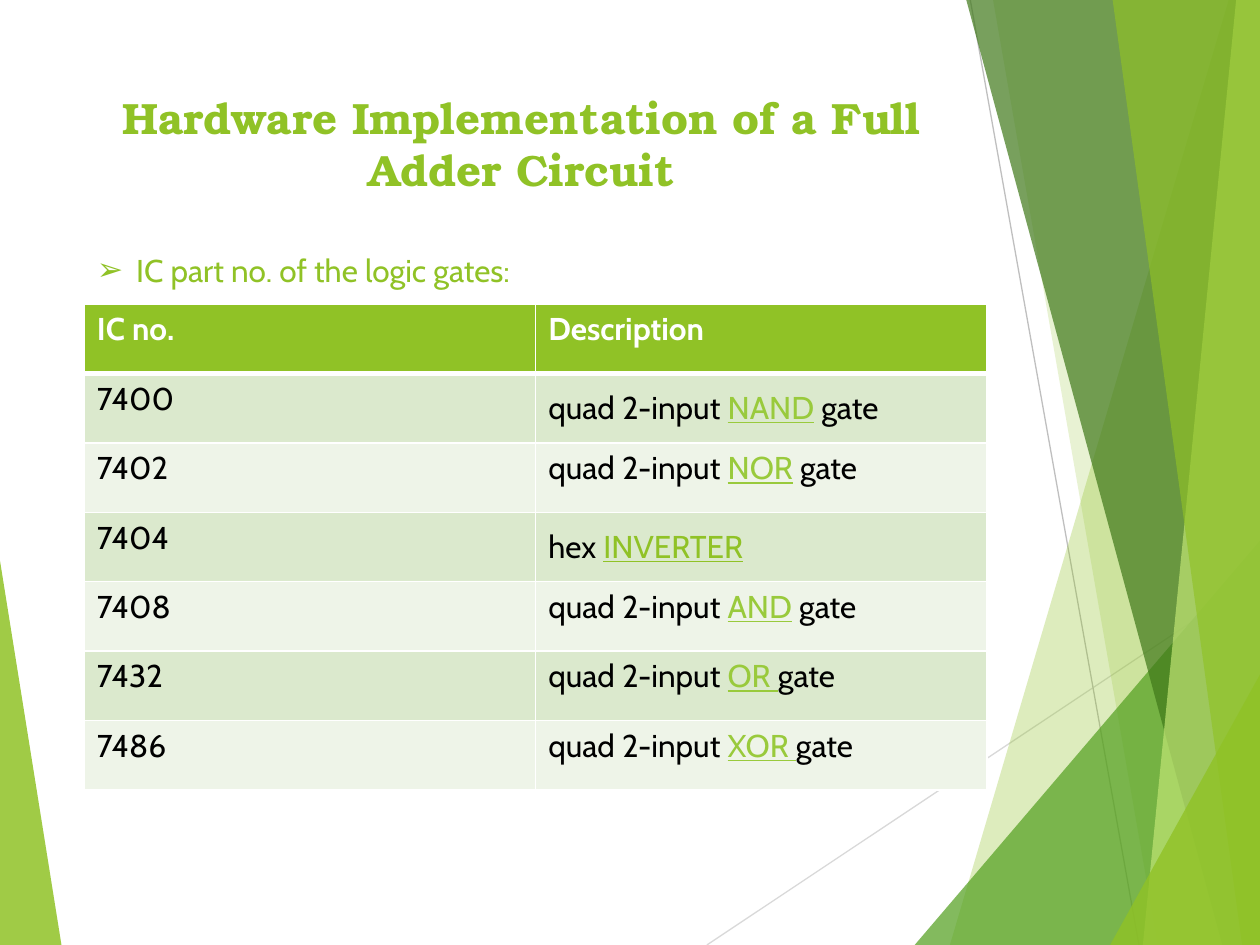
from dataclasses import dataclass
from typing import Any

import lxml.etree
import pptx
import pptx.dml.color
import pptx.enum.shapes
import pptx.enum.text
import pptx.oxml.ns
import pptx.util

Cm = pptx.util.Cm
Pt = pptx.util.Pt
qn = pptx.oxml.ns.qn
ANCHOR = pptx.enum.text.MSO_ANCHOR


@dataclass(frozen=True)
class Theme:
    green: str = "90C226"
    link: str = "99CA3C"
    forest: str = "54A021"
    deep: str = "3F7819"
    lime: str = "C0E474"
    white: str = "FFFFFF"
    black: str = "000000"
    bands: tuple[str, str] = ("DBE9CD", "EEF4E8")
    title_font: str = "TeX Gyre Bonum"
    text_font: str = "Cabin"
    title_size: float = 25
    text_size: float = 18


THEME = Theme()
WIDTH, HEIGHT = 25.4, 19.05


@dataclass(frozen=True)
class Facet:
    corners: tuple[tuple[float, float], ...]
    color: str
    opacity: int


@dataclass(frozen=True)
class Ray:
    start: tuple[float, float]
    end: tuple[float, float]
    color: str


@dataclass(frozen=True)
class Gate:
    number: str
    lead: str
    link: str
    tail: str
    link_color: str = THEME.link
    anchor: Any = ANCHOR.TOP


RAYS = (
    Ray((14.25, HEIGHT), (25.43, 11.6), "D9D9D9"),
    Ray((19.56, 0), (22.96, HEIGHT), "BFBFBF"),
)


def right_facet(top: float, bottom: float, color: str, opacity: int) -> Facet:
    corners = ((top, 0), (bottom, HEIGHT), (WIDTH, HEIGHT), (WIDTH, 0))
    return Facet(corners, color, opacity)


def corner_facet(left: float, top: float, color: str, opacity: int) -> Facet:
    corners = ((left, HEIGHT), (WIDTH, top), (WIDTH, HEIGHT))
    return Facet(corners, color, opacity)


LEFT_FACET = Facet(((0, 11.3), (1.24, HEIGHT), (0, HEIGHT)), THEME.green, 85)
RIGHT_FACETS = (
    right_facet(24.77, 19.15, THEME.green, 30),
    right_facet(20.02, 23.34, THEME.green, 20),
    corner_facet(18.44, 10.9, THEME.forest, 72),
    right_facet(19.48, 24.64, THEME.deep, 70),
    right_facet(24.92, 23.04, THEME.lime, 70),
    right_facet(22.43, 25.04, THEME.green, 65),
    corner_facet(22.38, 13.6, THEME.green, 80),
)

HEADINGS = ("IC no.", "Description")
GATES = (
    Gate("7400", "quad 2-input ", "NAND", " gate", anchor=ANCHOR.MIDDLE),
    Gate("7402", "quad 2-input ", "NOR", " gate"),
    Gate("7404", "hex ", "INVERTER", "", THEME.green, ANCHOR.MIDDLE),
    Gate("7408", "quad 2-input ", "AND", " gate"),
    Gate("7432", "quad 2-input ", "OR ", "gate"),
    Gate("7486", "quad 2-input ", "XOR ", "gate"),
)


def rgb(color: str) -> Any:
    return pptx.dml.color.RGBColor.from_string(color)


def apply_format(target: Any, values: dict[str, Any]) -> None:
    for attribute, value in values.items():
        setattr(target, attribute, value)


def paint(fill: Any, color: str) -> None:
    fill.solid()
    fill.fore_color.rgb = rgb(color)


def add_run(paragraph: Any, text: str, color: str, **extra: Any) -> None:
    run = paragraph.add_run()
    run.text = text
    base = {"name": THEME.text_font, "size": Pt(THEME.text_size), "bold": False}
    apply_format(run.font, base | extra)
    run.font.color.rgb = rgb(color)


def draw_ray(slide: Any, ray: Ray) -> None:
    ends = [Cm(value) for value in ray.start + ray.end]
    line = slide.shapes.add_connector(pptx.enum.shapes.MSO_CONNECTOR.STRAIGHT, *ends)
    line.line.color.rgb = rgb(ray.color)
    line.line.width = Pt(0.75)
    lxml.etree.SubElement(line._element.spPr, qn("a:effectLst"))


def draw_facet(slide: Any, facet: Facet) -> None:
    first, *others = [(Cm(x), Cm(y)) for x, y in facet.corners]
    builder = slide.shapes.build_freeform(*first)
    builder.add_line_segments(others, close=True)
    pane = builder.convert_to_shape()
    pane.shadow.inherit = False
    pane.line.fill.background()
    paint(pane.fill, facet.color)
    color = pane._element.spPr.find(qn("a:solidFill")).find(qn("a:srgbClr"))
    lxml.etree.SubElement(color, qn("a:alpha"), val=str(facet.opacity * 1000))


def place(holder: Any, left: float, top: float, width: float, height: float) -> Any:
    apply_format(holder, {"left": Cm(left), "top": Cm(top),
                          "width": Cm(width), "height": Cm(height)})
    apply_format(holder.text_frame, {
        "word_wrap": True,
        "vertical_anchor": ANCHOR.TOP,
        "auto_size": pptx.enum.text.MSO_AUTO_SIZE.NONE,
    })
    paragraph = holder.text_frame.paragraphs[0]
    paragraph.space_before = Pt(0)
    return paragraph


def write_texts(slide: Any) -> None:
    title = place(slide.shapes.title, 1.7, 1.7, 17.63, 2.82)
    title.alignment = pptx.enum.text.PP_ALIGN.CENTER
    add_run(title, "Hardware Implementation of a Full Adder Circuit", THEME.green,
            name=THEME.title_font, size=Pt(THEME.title_size), bold=True)

    intro = place(slide.placeholders[1], 1.7, 4.93, 10, 1.02)
    add_run(intro, "IC part no. of the logic gates:", THEME.green)
    properties = intro._p.get_or_add_pPr()
    indent = Cm(0.79)
    properties.set("marL", str(indent))
    properties.set("indent", str(-indent))
    lxml.etree.SubElement(properties, qn("a:buChar"), char="➢")


def style_cell(cell: Any, color: str, bottom: float = 1) -> Any:
    properties = cell._tc.get_or_add_tcPr()
    for side, width in {"L": 1, "R": 1, "T": 1, "B": bottom}.items():
        border = lxml.etree.SubElement(properties, qn(f"a:ln{side}"), w=str(Pt(width)))
        fill = lxml.etree.SubElement(border, qn("a:solidFill"))
        lxml.etree.SubElement(fill, qn("a:srgbClr"), val=THEME.white)
    paint(cell.fill, color)
    return cell.text_frame.paragraphs[0]


def draw_gates(slide: Any) -> None:
    count = len(GATES) + 1
    frame = slide.shapes.add_table(count, len(HEADINGS), Cm(1.7), Cm(6.13),
                                   Cm(18.2), Cm(1.4 * count))
    table = frame.table
    for column, heading in enumerate(HEADINGS):
        paragraph = style_cell(table.cell(0, column), THEME.green, 3)
        add_run(paragraph, heading, THEME.white, bold=True)
    for row, gate in enumerate(GATES, 1):
        band = THEME.bands[(row - 1) % 2]
        add_run(style_cell(table.cell(row, 0), band), gate.number, THEME.black)
        description = table.cell(row, 1)
        paragraph = style_cell(description, band)
        description.vertical_anchor = gate.anchor
        add_run(paragraph, gate.lead, THEME.black)
        add_run(paragraph, gate.link, gate.link_color, underline=True)
        if gate.tail:
            add_run(paragraph, gate.tail, THEME.black)


def main() -> None:
    deck = pptx.Presentation()
    apply_format(deck, {"slide_width": Cm(WIDTH), "slide_height": Cm(HEIGHT)})
    slide = deck.slides.add_slide(deck.slide_layouts[1])
    draw_facet(slide, LEFT_FACET)
    for ray in RAYS:
        draw_ray(slide, ray)
    for facet in RIGHT_FACETS:
        draw_facet(slide, facet)
    write_texts(slide)
    draw_gates(slide)
    deck.save("out.pptx")


if __name__ == "__main__":
    main()
